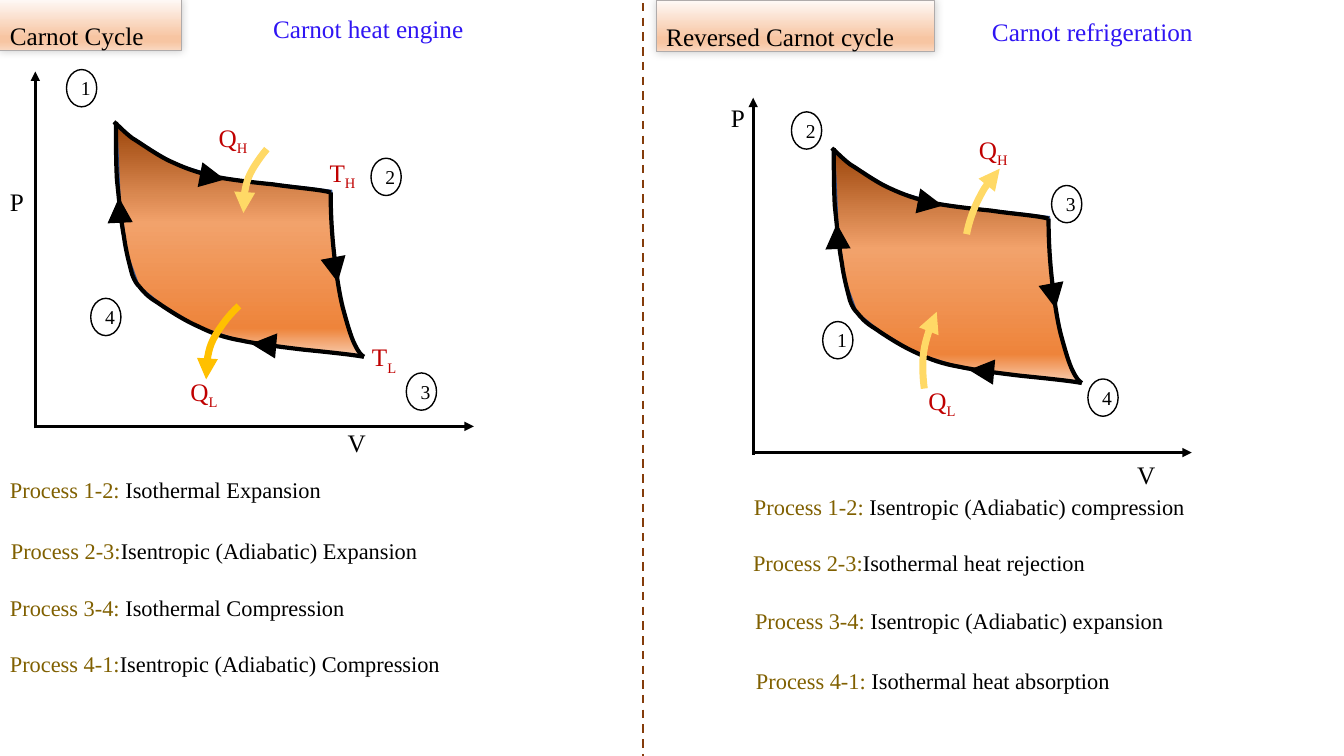
"""Build a slide comparing the Carnot heat engine with Carnot refrigeration."""
import pptx
import pptx.util
import pptx.dml.color
import pptx.enum.dml
import pptx.enum.shapes
import pptx.enum.text
import pptx.oxml.ns
from lxml import etree

RGBColor = pptx.dml.color.RGBColor
Inches = pptx.util.Inches
Pt = pptx.util.Pt
qn = pptx.oxml.ns.qn
SHAPE = pptx.enum.shapes.MSO_SHAPE
ALIGN = pptx.enum.text.PP_ALIGN
ANCHOR = pptx.enum.text.MSO_ANCHOR

BLACK = RGBColor(0x00, 0x00, 0x00)
OLIVE = RGBColor(0x80, 0x60, 0x00)
RED = RGBColor(0xC0, 0x00, 0x00)
BLUE = RGBColor(0x2F, 0x15, 0xF3)
OUTLINE = RGBColor(0x32, 0x54, 0x91)
GRAY = RGBColor(0xAF, 0xAB, 0xAB)
BROWN = RGBColor(0x84, 0x3C, 0x0B)
YELLOW = RGBColor(0xFF, 0xD9, 0x66)
GOLD = RGBColor(0xFF, 0xC0, 0x00)
COPPER = [(0, RGBColor(0x9E, 0x48, 0x0E)), (42, RGBColor(0xF2, 0xA2, 0x6B)),
          (88, RGBColor(0xEE, 0x84, 0x3B)), (100, RGBColor(0xF8, 0xCB, 0xAD))]
PEACH = [(0, RGBColor(0xFE, 0xF8, 0xF5)), (74, RGBColor(0xF7, 0xC5, 0xA2)),
         (83, RGBColor(0xF7, 0xC5, 0xA2)), (100, RGBColor(0xFA, 0xD8, 0xC1))]

AREA = [(1.16, 1.26), (1.19, 1.97), (1.26, 2.51), (1.38, 2.84), (1.59, 3.01), (1.98, 3.25),
        (2.37, 3.37), (2.89, 3.46), (3.48, 3.51), (3.6, 3.53), (3.53, 3.44), (3.45, 3.24),
        (3.35, 2.81), (3.28, 2.11), (3.29, 1.89), (3.05, 1.86), (2.79, 1.83), (2.49, 1.8),
        (2.16, 1.75), (1.75, 1.63), (1.5, 1.48), (1.3, 1.36)]
CURVES = [
    [(1.13, 1.21), (1.18, 1.25), (1.22, 1.3), (1.31, 1.37), (1.41, 1.43), (1.57, 1.55),
     (1.71, 1.61), (1.84, 1.67), (1.95, 1.71), (2.12, 1.75), (2.29, 1.79), (2.71, 1.83),
     (2.71, 1.83), (2.9, 1.86), (3.18, 1.88), (3.28, 1.91)],
    [(3.28, 1.91), (3.28, 2.1), (3.29, 2.29), (3.31, 2.48), (3.33, 2.67), (3.36, 2.89),
     (3.4, 3.05), (3.44, 3.2), (3.48, 3.34), (3.52, 3.42), (3.56, 3.5), (3.58, 3.52),
     (3.61, 3.54)],
    [(1.15, 1.21), (1.15, 1.4), (1.15, 1.59), (1.16, 1.78), (1.18, 1.97), (1.2, 2.19),
     (1.23, 2.35), (1.25, 2.5), (1.29, 2.64), (1.31, 2.72), (1.34, 2.8), (1.36, 2.82),
     (1.38, 2.84)],
    [(1.38, 2.84), (1.42, 2.89), (1.46, 2.94), (1.56, 3), (1.66, 3.07), (1.83, 3.18),
     (1.97, 3.24), (2.11, 3.31), (2.23, 3.35), (2.4, 3.38), (2.58, 3.42), (3.02, 3.47),
     (3.02, 3.47), (3.22, 3.49), (3.51, 3.52), (3.61, 3.54)]]
FLOWS = [(2.02, 1.74, 2.23, 1.78), (3.32, 2.64, 3.35, 2.8),
         (2.72, 3.43, 2.49, 3.41), (1.19, 2.17, 1.18, 1.96)]
DIAGRAM_SHIFTS = [(0, 0), (7.12, 0.26)]
STATES = [("1", 0.66, 0.69), ("2", 3.68, 1.57), ("3", 4.03, 3.7), ("4", 0.9, 2.96),
          ("1", 8.16, 3.19), ("2", 7.85, 1.11), ("3", 10.43, 1.84), ("4", 10.79, 3.76)]
AXIS_LABELS = [("P", 0, 1.8), ("V", 3.35, 4.19), ("P", 7.15, 0.97), ("V", 11.18, 4.51)]
HEAT_LABELS = [("Q", "H", 2.07, 1.16), ("Q", "L", 1.79, 3.68), ("Q", "L", 9.11, 3.77),
               ("Q", "H", 9.61, 1.28), ("T", "H", 3.17, 1.51), ("T", "L", 3.59, 3.34)]
HEAT_ARROWS = [((2.88, 0.46, 2.13, 3.07), 265.6, (162, 177.65), False, YELLOW),
               ((2.51, 2.11, 2.13, 3.07), 265.6, (162, 180.77), False, GOLD),
               ((9.21, 2.32, 2.67, 2.81), 116.7, (162, 181.25), True, YELLOW),
               ((9.58, 1.25, 2.67, 2.81), 148.5, (170.42, 188.68), True, YELLOW)]
TITLES = [("Carnot Cycle", (0, 0, 1.8, 0.5)), ("Reversed Carnot cycle", (6.51, 0.01, 2.76, 0.5))]
SUBTITLES = [("Carnot heat engine", 2.61, 0.08), ("Carnot refrigeration", 9.74, 0.11)]
PROCESSES = [("Process 1-2: ", "Isothermal Expansion", 0, 4.67, 3.48),
             ("Process 2-3:", "Isentropic (Adiabatic) Expansion", 0.01, 5.28, 4.33),
             ("Process 3-4: ", "Isothermal Compression", 0, 5.85, 3.91),
             ("Process 4-1:", "Isentropic (Adiabatic) Compression", 0, 6.4, 4.7),
             ("Process 1-2: ", "Isentropic (Adiabatic) compression", 7.38, 4.84, 4.64),
             ("Process 2-3:", "Isothermal heat rejection", 7.37, 5.4, 3.89),
             ("Process 3-4: ", "Isentropic (Adiabatic) expansion", 7.39, 5.97, 4.7),
             ("Process 4-1:", " Isothermal heat absorption", 7.4, 6.57, 4.07)]


class Slide:
    def __init__(self, prs):
        self.s = prs.slides.add_slide(prs.slide_layouts[6])
        self.font = {"name": "Times New Roman"}
        self.frame = {"word_wrap": True,
                      "auto_size": pptx.enum.text.MSO_AUTO_SIZE.SHAPE_TO_FIT_TEXT}

    def apply(self, target, values):
        for name, value in values.items():
            setattr(target, name, value)

    def stroke(self, sp, color, width):
        sp.line.color.rgb = color
        sp.line.width = Pt(width)

    def arrowhead(self, sp, end):
        etree.SubElement(sp._element.spPr.find(qn("a:ln")), qn(end), type="triangle")

    def gradient(self, sp, stops):
        sp.fill.gradient()
        sp.fill.gradient_angle = 270
        gs_list = next(sp._element.iter(qn("a:gsLst")))
        for gs in list(gs_list):
            gs_list.remove(gs)
        for position, color in stops:
            gs = etree.SubElement(gs_list, qn("a:gs"), pos=str(position * 1000))
            etree.SubElement(gs, qn("a:srgbClr"), val=str(color))

    def add_runs(self, p, runs, size, **paragraph):
        self.apply(p, paragraph)
        for text, color in runs:
            r = p.add_run()
            r.text = text
            self.apply(r.font, {**self.font, "size": Pt(size)})
            r.font.color.rgb = color
        return r

    def text(self, box, runs, size, **paragraph):
        tf = self.s.shapes.add_textbox(*map(Inches, box)).text_frame
        self.apply(tf, self.frame)
        return self.add_runs(tf.paragraphs[0], runs, size, **paragraph)

    def symbol(self, letter, index, left, top):
        r = self.text((left, top, 0.62, 0.4), [(letter, RED), (index, RED)], 18)
        r.font._element.set("baseline", "-25000")

    def line(self, ends, color, width, arrow=True, dash=None):
        sp = self.s.shapes.add_connector(
            pptx.enum.shapes.MSO_CONNECTOR.STRAIGHT, *map(Inches, ends))
        self.stroke(sp, color, width)
        if dash:
            sp.line.dash_style = dash
        if arrow:
            self.arrowhead(sp, "a:tailEnd")
        etree.SubElement(sp._element.spPr, qn("a:effectLst"))

    def shape(self, kind, box, color, width):
        sp = self.s.shapes.add_shape(kind, *map(Inches, box))
        sp.shadow.inherit = False
        sp.fill.background()
        self.stroke(sp, color, width)
        return sp

    def state(self, number, left, top):
        tf = self.shape(SHAPE.OVAL, (left, top, 0.3, 0.37), BLACK, 1).text_frame
        tf.vertical_anchor = ANCHOR.MIDDLE
        self.add_runs(tf.paragraphs[0], [(number, BLACK)], 14, alignment=ALIGN.CENTER)

    def title(self, text, box):
        sp = self.shape(SHAPE.RECTANGLE, box, GRAY, 0.75)
        self.gradient(sp, PEACH)
        shadow = etree.SubElement(sp._element.spPr.find(qn("a:effectLst")), qn("a:outerShdw"),
                                  blurRad=str(Pt(6)), dist="0", dir="18900000")
        black = etree.SubElement(shadow, qn("a:srgbClr"), val=str(BLACK))
        etree.SubElement(black, qn("a:alpha"), val="20000")
        tf = sp.text_frame
        self.apply(tf, {**self.frame, "vertical_anchor": ANCHOR.TOP})
        self.add_runs(tf.paragraphs[0], [(text, BLACK)], 18,
                      alignment=ALIGN.LEFT, line_spacing=1.5)

    def heat_arrow(self, box, rotation, angles, flipped, color):
        sp = self.shape(SHAPE.ARC, box, color, 5)
        sp.rotation = rotation
        sp.adjustments[0], sp.adjustments[1] = angles
        if flipped:
            sp._element.spPr.xfrm.set("flipV", "1")
        self.arrowhead(sp, "a:headEnd")

    def outline(self, points, color, width, close=False):
        points = [(Inches(x), Inches(y)) for x, y in points]
        builder = self.s.shapes.build_freeform(*points[0])
        builder.add_line_segments(points[1:], close=close)
        sp = builder.convert_to_shape()
        sp.shadow.inherit = False
        sp.fill.background()
        self.stroke(sp, color, width)
        return sp

    def curve(self, points):
        sp = self.outline(points, BLACK, 3)
        steps = list(sp._element.iter(qn("a:lnTo")))
        for first, second, third in zip(steps[::3], steps[1::3], steps[2::3]):
            bezier = etree.Element(qn("a:cubicBezTo"))
            first.addprevious(bezier)
            for step in (first, second, third):
                bezier.append(step[0])
                step.getparent().remove(step)

    def diagram(self, dx, dy):
        def shift(points):
            return [(x + dx, y + dy) for x, y in points]
        self.gradient(self.outline(shift(AREA), OUTLINE, 1, close=True), COPPER)
        self.line((0.35 + dx, 4.25 + dy, 0.35 + dx, 0.71 + dy), BLACK, 2.25)
        self.line((0.35 + dx, 4.23 + dy, 4.7 + dx, 4.23 + dy), BLACK, 2.25)
        for points in CURVES:
            self.curve(shift(points))
        for x1, y1, x2, y2 in FLOWS:
            self.line((x1 + dx, y1 + dy, x2 + dx, y2 + dy), BLACK, 6)


def main():
    prs = pptx.Presentation()
    prs.slide_width, prs.slide_height = Inches(13.33), Inches(7.5)
    slide = Slide(prs)
    for shift in DIAGRAM_SHIFTS:
        slide.diagram(*shift)
    for state in STATES:
        slide.state(*state)
    for title in TITLES:
        slide.title(*title)
    for arrow in HEAT_ARROWS:
        slide.heat_arrow(*arrow)
    for label, left, top in AXIS_LABELS:
        slide.text((left, top, 0.63, 0.4), [(label, BLACK)], 18)
    for label in HEAT_LABELS:
        slide.symbol(*label)
    for step, process, left, top, width in PROCESSES:
        slide.text((left, top, width, 0.37), [(step, OLIVE), (process, BLACK)], 16,
                   space_before=Pt(6), space_after=Pt(6))
    for subtitle, left, top in SUBTITLES:
        slide.text((left, top, 2.89, 0.4), [(subtitle, BLUE)], 18)
    slide.line((6.38, 0.03, 6.38, 7.5), BROWN, 1.5, arrow=False,
               dash=pptx.enum.dml.MSO_LINE.DASH)
    prs.save("out.pptx")


if __name__ == "__main__":
    main()
